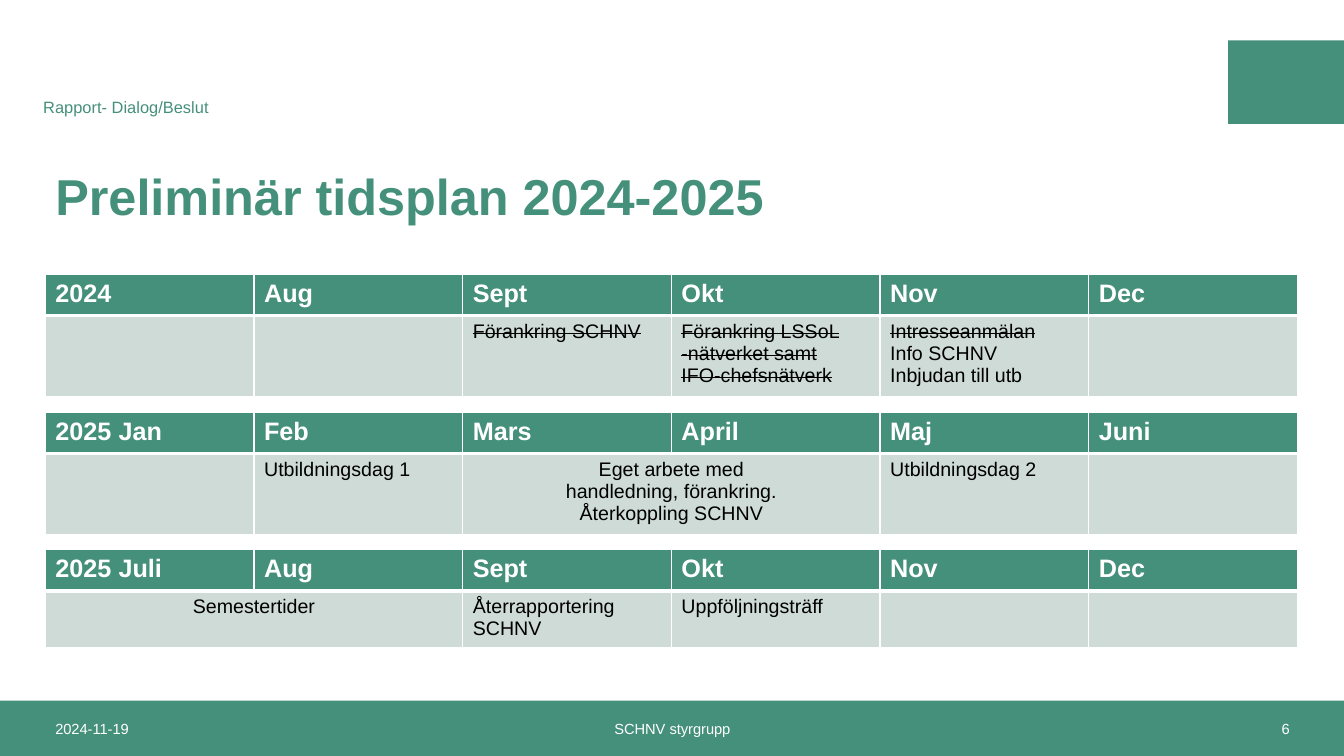
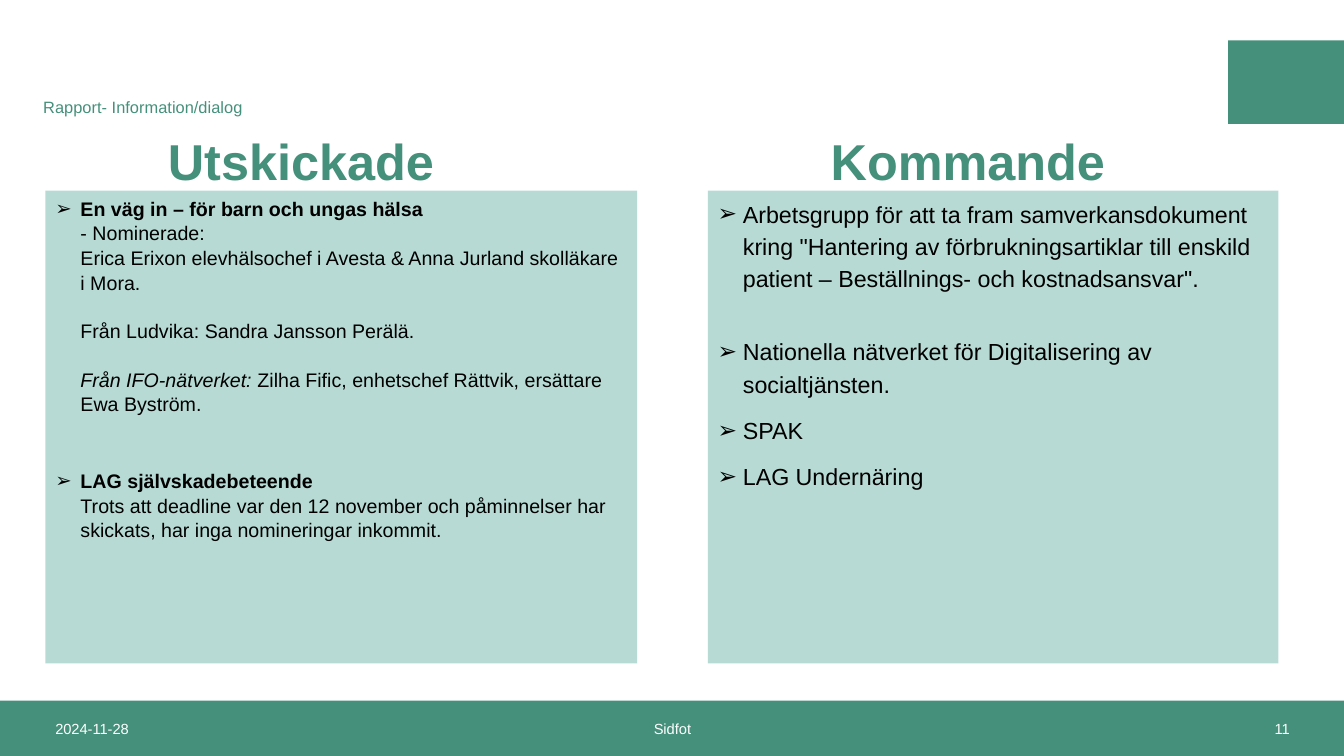
from lxml.etree import SubElement
from pptx import Presentation
from pptx.dml.color import RGBColor
from pptx.enum.shapes import MSO_SHAPE as Shape
from pptx.enum.text import MSO_ANCHOR as Anchor, PP_ALIGN as Align
from pptx.oxml import parse_xml
from pptx.oxml.ns import nsdecls, qn
from pptx.util import Inches, Pt

FONT = "Arial"
HEX = {"green": "45907A", "cell": "CFDBD7", "panel": "B7DBD4",
       "white": "FFFFFF", "black": "000000"}
LEFT, COL = 0.45, 2.07
HEAD = 0.41
INDENT = 0.25


def color(name):
    return RGBColor.from_string(HEX[name])


def write(para, runs, size, ink):
    """Add (text, marks) runs; marks hold b(old), i(talic), s(truck)."""
    for text, marks in runs:
        run = para.add_run()
        run.text = text
        font = run.font
        font.name, font.size = FONT, Pt(size)
        font.color.rgb = color(ink)
        font.bold, font.italic = "b" in marks, "i" in marks
        if "s" in marks:
            run._r.get_or_add_rPr().set("strike", "sngStrike")


def next_para(frame, index):
    return frame.add_paragraph() if index else frame.paragraphs[0]


def add_box(slide, area, fill):
    box = slide.shapes.add_shape(Shape.RECTANGLE, *map(Inches, area))
    box.shadow.inherit = False
    box.fill.solid()
    box.fill.fore_color.rgb = color(fill)
    box.line.fill.background()
    return box


def add_label(slide, area, text, size, ink, align=Align.LEFT, marks=""):
    frame = slide.shapes.add_textbox(*map(Inches, area)).text_frame
    frame.word_wrap = True
    frame.vertical_anchor = Anchor.MIDDLE
    para = frame.paragraphs[0]
    para.alignment = align
    write(para, [(text, marks)], size, ink)
    return para


def add_title(slide, area, text, align=Align.LEFT):
    para = add_label(slide, area, text, 36, "green", align, "b")
    para.line_spacing = 0.9


def add_base(deck, topic, date, foot, page):
    """Start a slide with the corner block, topic line and footer band."""
    slide = deck.slides.add_slide(deck.slide_layouts[6])
    add_box(slide, (12.18, 0.4, 1.15, 0.83), "green")
    add_box(slide, (0, 6.95, 13.33, 0.55), "green")
    for left, width, text, align in ((LEFT, 3.47, date, Align.LEFT),
                                     (4.42, 4.5, foot, Align.CENTER),
                                     (9.42, 3.47, page, Align.RIGHT)):
        add_label(slide, (left, 6.95, width, 0.55), text, 10.5, "white", align)
    add_label(slide, (0.33, 0.86, 3, 0.4), topic, 11.7, "green")
    return slide


def style_cell(cell, fill, base):
    """Fill a cell and give it white borders, the lower one base points wide."""
    cell.fill.solid()
    cell.fill.fore_color.rgb = color(fill)
    props = cell._tc.get_or_add_tcPr()
    for index, side in enumerate("LRTB"):
        width = Pt(base if side == "B" else 1)
        props.insert(index, parse_xml(
            f'<a:ln{side} {nsdecls("a")} w="{width}"><a:solidFill>'
            f'<a:srgbClr val="{HEX["white"]}"/></a:solidFill></a:ln{side}>'))


def add_plan(slide, top, depth, months, notes):
    """Add a month table; notes map a column to (span, lines)."""
    count = len(months)
    area = (LEFT, top, COL * count, HEAD + depth)
    table = slide.shapes.add_table(2, count, *map(Inches, area)).table
    table.horz_banding = False
    for row, high in zip(table.rows, (HEAD, depth)):
        row.height = Inches(high)
    for index, month in enumerate(months):
        table.columns[index].width = Inches(COL)
        head, body = table.cell(0, index), table.cell(1, index)
        style_cell(head, "green", 3)
        style_cell(body, "cell", 1)
        write(head.text_frame.paragraphs[0], [(month, "b")], 18, "white")
    for index, (span, lines) in notes.items():
        cell = table.cell(1, index)
        if span > 1:
            cell.merge(table.cell(1, index + span - 1))
        for step, line in enumerate(lines):
            para = next_para(cell.text_frame, step)
            para.alignment = Align.CENTER if span > 1 else Align.LEFT
            write(para, [line], 14, "black")


def add_list(slide, area, size, pitch, items):
    """Add a panel of (bullet, space before, runs) paragraphs."""
    frame = add_box(slide, area, "panel").text_frame
    frame.word_wrap = True
    frame.vertical_anchor = Anchor.TOP
    for index, (mark, gap, runs) in enumerate(items):
        para = next_para(frame, index)
        para.alignment = Align.LEFT
        para.line_spacing = pitch
        para.space_before = Pt(gap)
        props = para._p.get_or_add_pPr()
        props.set("marL", str(Inches(INDENT)))
        props.set("indent", str(-Inches(INDENT) if mark else 0))
        if mark:
            SubElement(props, qn("a:buFont"), typeface=FONT)
            SubElement(props, qn("a:buChar"), char=mark)
        else:
            SubElement(props, qn("a:buNone"))
        write(para, runs, size, "black")


def add_times(deck):
    slide = add_base(deck, "Rapport- Dialog/Beslut", "2024-11-19",
                     "SCHNV styrgrupp", "6")
    add_title(slide, (LEFT, 1.32, 11.39, 1.32), "Preliminär tidsplan 2024-2025")
    add_plan(slide, 2.72, 0.75, ("2024", "Aug", "Sept", "Okt", "Nov", "Dec"), {
        2: (1, [("Förankring SCHNV", "s")]),
        3: (1, [("Förankring LSSoL -nätverket samt", "s"),
                ("IFO-chefsnätverk", "s")]),
        4: (1, [("Intresseanmälan", "s"), ("Info SCHNV", ""),
                ("Inbjudan till utb", "")])})
    add_plan(slide, 4.09, 0.75,
             ("2025 Jan", "Feb", "Mars", "April", "Maj", "Juni"), {
                 1: (1, [("Utbildningsdag 1", "")]),
                 2: (2, [("Eget arbete med", ""),
                         ("handledning, förankring.", ""),
                         ("Återkoppling SCHNV", "")]),
                 4: (1, [("Utbildningsdag 2", "")])})
    add_plan(slide, 5.45, 0.53,
             ("2025 Juli", "Aug", "Sept", "Okt", "Nov", "Dec"), {
                 0: (2, [("Semestertider", "")]),
                 2: (1, [("Återrapportering SCHNV", "")]),
                 3: (1, [("Uppföljningsträff", "")])})


def add_calls(deck):
    slide = add_base(deck, "Rapport- Information/dialog", "2024-11-28",
                     "Sidfot", "11")
    add_title(slide, (0.75, 0.97, 4.47, 1.32), "Utskickade", Align.CENTER)
    add_title(slide, (8.14, 0.97, 4.47, 1.32), "Kommande")
    add_list(slide, (LEFT, 1.89, 5.87, 4.69), 14, 1.05, [
        ("➢", 0, [("En väg in – för barn och ungas hälsa", "b")]),
        ("", 0, [("- Nominerade:", "")]),
        ("", 0, [("Erica Erixon elevhälsochef i Avesta & Anna Jurland "
                  "skolläkare i Mora.", "")]),
        ("", 17, [("Från Ludvika: Sandra Jansson Perälä.", "")]),
        ("", 17, [("Från IFO-nätverket: ", "i"),
                  ("Zilha Fific, enhetschef Rättvik, ersättare Ewa Byström.",
                   "")]),
        ("➢", 37, [("LAG självskadebeteende", "b")]),
        ("", 0, [("Trots att deadline var den 12 november och påminnelser har "
                  "skickats, har inga nomineringar inkommit.", "")])])
    add_list(slide, (7.02, 1.89, 5.66, 4.69), 16.6, 1.16, [
        ("➢", 0, [("Arbetsgrupp för att ta fram samverkansdokument kring "
                   "\"Hantering av förbrukningsartiklar till enskild patient "
                   "– Beställnings- och kostnadsansvar\".", "")]),
        ("➢", 29, [("Nationella nätverket för Digitalisering av "
                    "socialtjänsten.", "")]),
        ("➢", 10, [("SPAK", "")]),
        ("➢", 10, [("LAG Undernäring", "")])])


def main():
    deck = Presentation()
    deck.slide_width, deck.slide_height = Inches(13.33), Inches(7.5)
    add_times(deck)
    add_calls(deck)
    deck.save("out.pptx")


if __name__ == "__main__":
    main()
